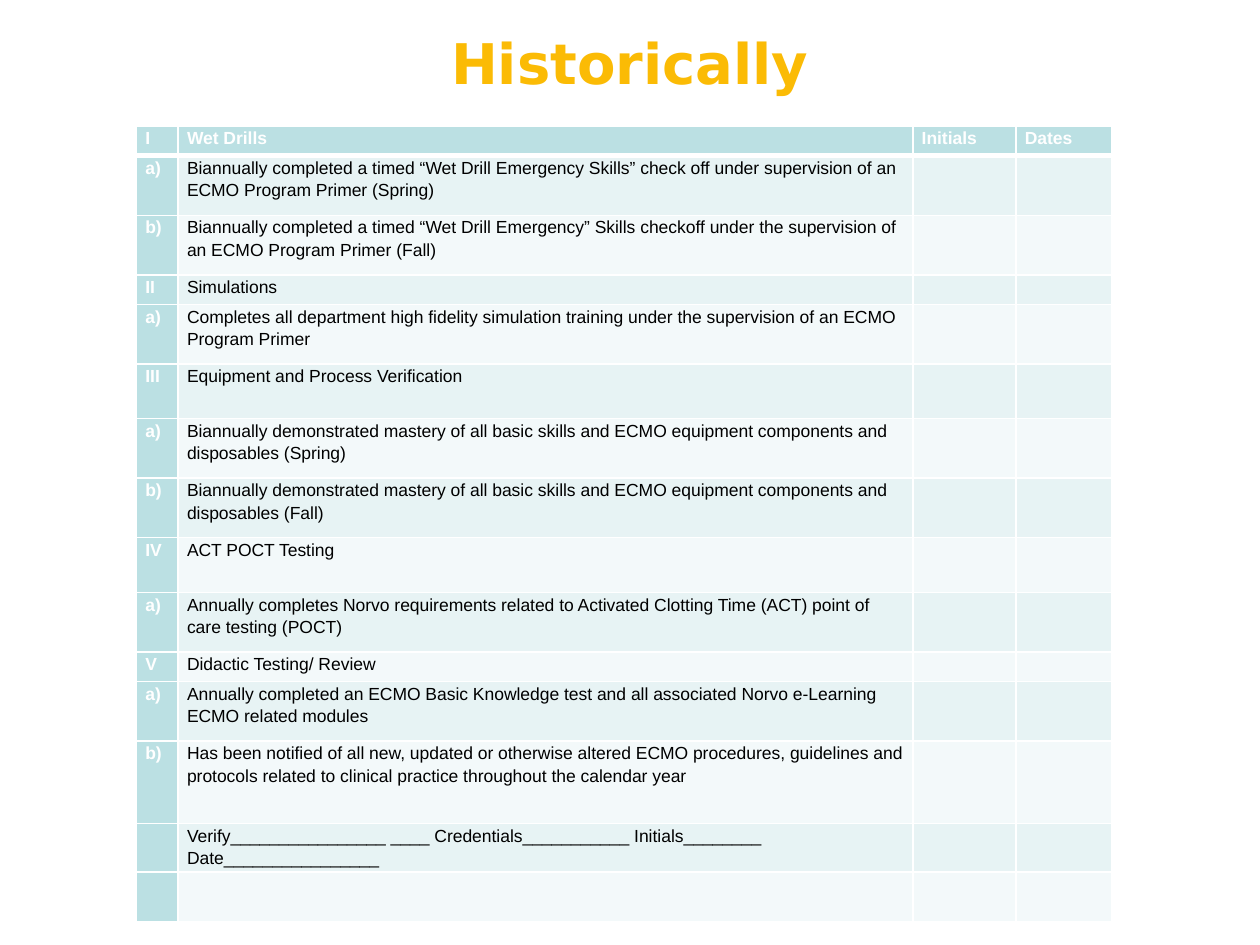
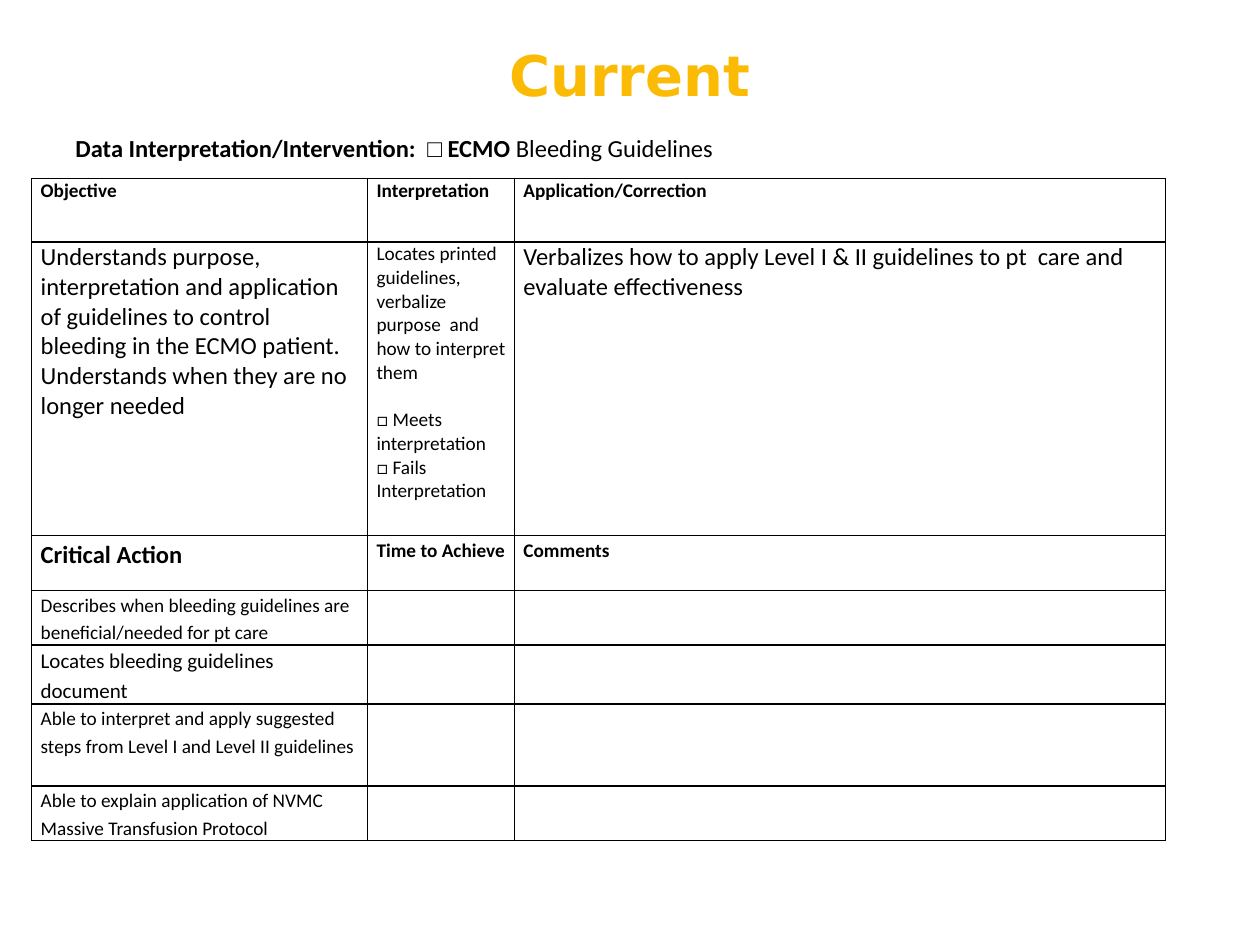
from lxml import etree
from pptx import Presentation
from pptx.dml.color import RGBColor
from pptx.enum import text
from pptx.oxml import ns
from pptx.util import Cm, Pt

GOLD = RGBColor(0xFB, 0xBB, 0x05)
TEAL = RGBColor(0xBB, 0xE0, 0xE3)
PALE = RGBColor(0xE7, 0xF3, 0xF4)
PALER = RGBColor(0xF3, 0xF9, 0xFA)
WHITE = RGBColor(0xFF, 0xFF, 0xFF)
BLACK = RGBColor(0, 0, 0)

LABEL, WIDE, SHORT, TALL, SIGN, LAST = 0.6, 1.2, 1.1, 1.66, 0.91, 1

DRILLS = [
    (LABEL, "I", "Wet Drills", "Initials", "Dates"),
    (WIDE, "a)", "Biannually completed a timed “Wet Drill Emergency Skills” check off "
     "under supervision of an ECMO Program Primer (Spring)"),
    (WIDE, "b)", "Biannually completed a timed “Wet Drill Emergency” Skills checkoff "
     "under the supervision of an ECMO Program Primer (Fall)"),
    (LABEL, "II", "Simulations"),
    (WIDE, "a)", "Completes all department high fidelity simulation training under "
     "the supervision of an ECMO Program Primer"),
    (SHORT, "III", "Equipment and Process Verification"),
    (WIDE, "a)", "Biannually demonstrated mastery of all basic skills and ECMO "
     "equipment components and disposables (Spring)"),
    (WIDE, "b)", "Biannually demonstrated mastery of all basic skills and ECMO "
     "equipment components and disposables (Fall)"),
    (SHORT, "IV", "ACT POCT Testing"),
    (WIDE, "a)", "Annually completes Norvo requirements related to Activated Clotting "
     "Time (ACT) point of care testing (POCT)"),
    (LABEL, "V", "Didactic Testing/ Review"),
    (WIDE, "a)", "Annually completed an ECMO Basic Knowledge test and all associated "
     "Norvo e-Learning ECMO related modules"),
    (TALL, "b)", "Has been notified of all new, updated or otherwise altered ECMO "
     "procedures, guidelines and protocols related to clinical practice throughout "
     "the calendar year"),
    (SIGN, "", "Verify________________ ____ Credentials___________ "
     "Initials________ Date________________"),
    (LAST,),
]

GUIDELINES = [
    (1.28, (11, True, "Objective"), (11, True, "Interpretation"),
     (11, True, "Application/Correction")),
    (5.92, (14, False, "Understands purpose, interpretation and application of guidelines "
            "to control bleeding in the ECMO patient. Understands when they are no longer "
            "needed"),
     (11, False, "Locates printed guidelines, verbalize purpose  and how to interpret them",
      "□ Meets interpretation", "□ Fails Interpretation"),
     (14, False, "Verbalizes how to apply Level I & II guidelines to pt  care and "
      "evaluate effectiveness")),
    (1.1, (14, True, "Critical Action"), (11, True, "Time to Achieve"),
     (11, True, "Comments")),
    (1.1, (11, False, "Describes when bleeding guidelines are beneficial/needed "
           "for pt care")),
    (1.19, (12, False, "Locates bleeding guidelines document")),
    (1.65, (11, False, "Able to interpret and apply suggested steps from Level I and "
            "Level II guidelines")),
    (1.1, (11, False, "Able to explain application of NVMC Massive Transfusion Protocol")),
]


def add_run(p, words, font, size, color, bold=False):
    """Append one formatted run to a paragraph."""
    r = p.add_run()
    r.text = words
    r.font.name, r.font.size, r.font.bold = font, Pt(size), bold
    r.font.color.rgb = color


def add_title(s, words, top, height):
    """Place the centred gold title."""
    tf = s.shapes.add_textbox(Cm(1.27), Cm(top), Cm(22.86), Cm(height)).text_frame
    tf.word_wrap = True
    tf.vertical_anchor = text.MSO_ANCHOR.MIDDLE
    tf.paragraphs[0].alignment = text.PP_ALIGN.CENTER
    add_run(tf.paragraphs[0], words, "DejaVu Sans", 32, GOLD, True)


def set_borders(cell, color, top=1, bottom=1):
    """Draw the four edges of a cell, with widths in points."""
    tc_pr = cell._tc.get_or_add_tcPr()
    for side, width in (("L", 1), ("R", 1), ("T", top), ("B", bottom)):
        ln = etree.SubElement(tc_pr, ns.qn(f"a:ln{side}"), w=str(Pt(width)))
        fill = etree.SubElement(ln, ns.qn("a:solidFill"))
        etree.SubElement(fill, ns.qn("a:srgbClr"), val=str(color))


def fill_cell(cell, lines, font, size, color, bold, spacing):
    """Write one paragraph per line, or size an empty cell to its row."""
    cell.margin_left = cell.margin_right = Cm(0.18)
    cell.margin_top = cell.margin_bottom = 0
    tf = cell.text_frame
    if not lines:
        tf.paragraphs[0]._p.get_or_add_endParaRPr().set("sz", str(size * 100))
    for i, line in enumerate(lines):
        p = tf.add_paragraph() if i else tf.paragraphs[0]
        p.line_spacing = spacing
        if i == 1:
            p.space_before = Pt(13.4)
        add_run(p, line, font, size, color, bold)


def add_grid(s, left, top, widths, heights):
    """Add an empty table with the given column widths and row heights."""
    table = s.shapes.add_table(len(heights), len(widths), Cm(left), Cm(top),
                               Cm(sum(widths)), Cm(sum(heights))).table
    table.horz_banding = False
    for column, width in zip(table.columns, widths):
        column.width = Cm(width)
    for row, height in zip(table.rows, heights):
        row.height = Cm(height)
    return table


def add_drill_table(s, left, top):
    """Build the banded checklist with its header row and label column."""
    table = add_grid(s, left, top, (0.84, 14.81, 2.08, 1.94), [row[0] for row in DRILLS])
    for i, (_, *words) in enumerate(DRILLS):
        for j, cell in enumerate(table.rows[i].cells):
            head = i == 0 or j == 0
            set_borders(cell, WHITE, 3 if i == 1 else 1, 3 if i == 0 else 1)
            cell.fill.solid()
            cell.fill.fore_color.rgb = TEAL if head else PALE if i % 2 else PALER
            lines = [w for w in words[j:j + 1] if w]
            fill_cell(cell, lines, "Arial", 10, WHITE if head else BLACK, head, 1.15)


def add_guideline_table(s, left, top):
    """Build the ruled form for objectives and critical actions."""
    table = add_grid(s, left, top, (6.77, 2.96, 13.13), [row[0] for row in GUIDELINES])
    for i, (_, *entries) in enumerate(GUIDELINES):
        for j, cell in enumerate(table.rows[i].cells):
            size, bold, *lines = entries[j] if j < len(entries) else (11, False)
            set_borders(cell, BLACK)
            cell.fill.background()
            fill_cell(cell, lines, "Calibri", size, BLACK, bold, 1.15 if i > 1 else 1.0)


def add_form_heading(s, left, top):
    """Place the heading line above the form."""
    tf = s.shapes.add_textbox(Cm(left), Cm(top), Cm(13.49), Cm(0.86)).text_frame
    tf.word_wrap = False
    tf.vertical_anchor = text.MSO_ANCHOR.MIDDLE
    p = tf.paragraphs[0]
    for words, font, bold in (("Data Interpretation/Intervention:  ", "Calibri", True),
                              ("□", "Courier New", True),
                              (" ECMO", "Calibri", True),
                              (" Bleeding Guidelines", "Calibri", False)):
        add_run(p, words, font, 14, BLACK, bold)


def main():
    """Build both slides and save the deck."""
    prs = Presentation()
    prs.slide_width, prs.slide_height = Cm(25.4), Cm(19.05)
    blank = prs.slide_layouts[6]

    s = prs.slides.add_slide(blank)
    add_title(s, "Historically", 0.08, 2.34)
    add_drill_table(s, 2.75, 2.54)

    s = prs.slides.add_slide(blank)
    add_title(s, "Current", 0.64, 1.7)
    add_guideline_table(s, 0.64, 3.6)
    add_form_heading(s, 1.27, 2.54)

    prs.save("out.pptx")


if __name__ == "__main__":
    main()
